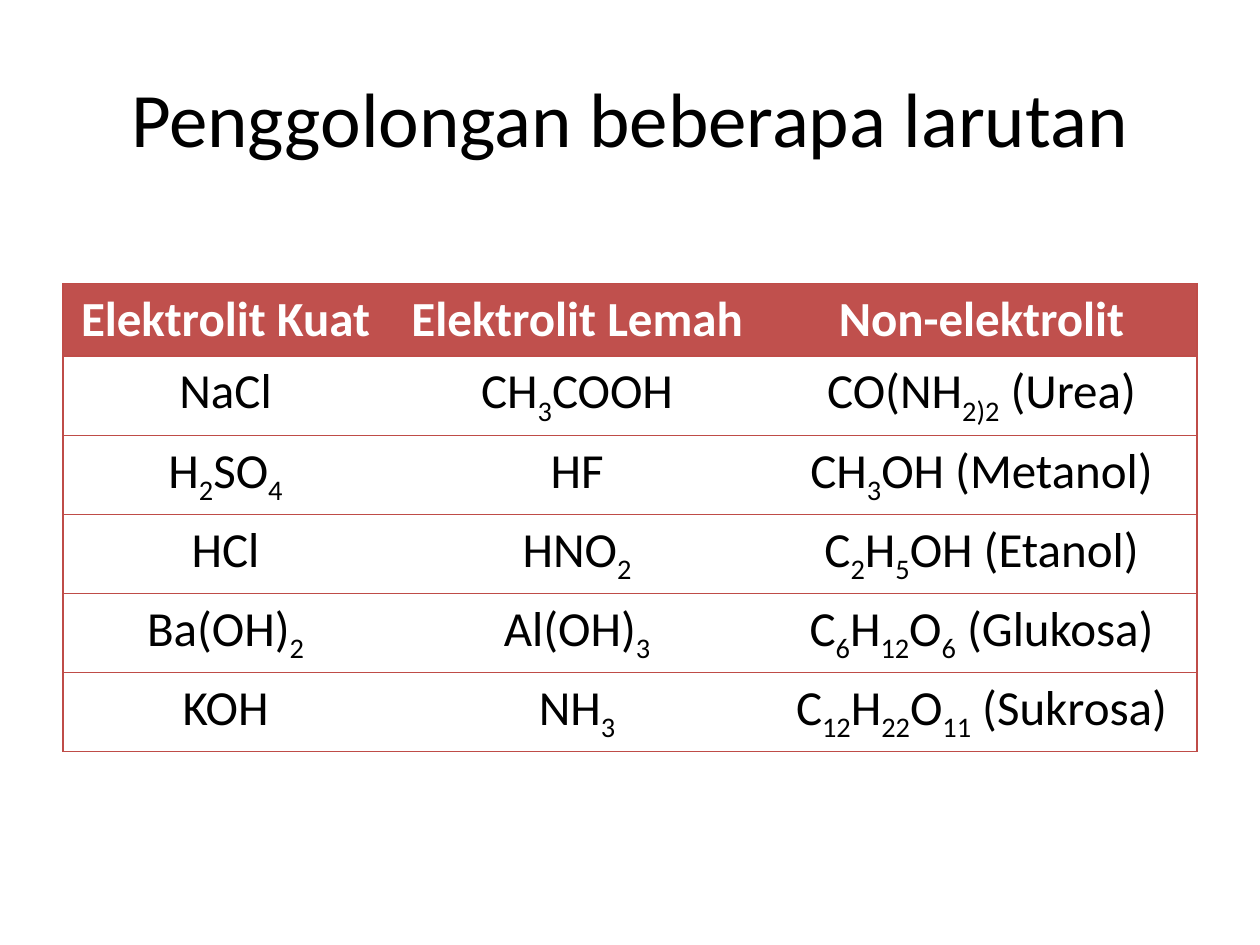
from dataclasses import dataclass

from lxml.etree import SubElement
from pptx import Presentation
from pptx.dml.color import RGBColor
from pptx.enum.text import MSO_ANCHOR, PP_ALIGN
from pptx.oxml.ns import qn
from pptx.util import Inches, Pt


@dataclass(frozen=True)
class Theme:
    font: str = "Calibri"
    ink: str = "000000"
    head: str = "C0504D"
    line: str = "BF4C48"
    white: str = "FFFFFF"
    title: int = 44
    body: int = 28
    rule: float = 0.75


THEME = Theme()
WIDTHS = (2.58, 3, 3.42)

# Text between underscores is set as a subscript
ROWS = (
    ("Elektrolit Kuat", "Elektrolit Lemah", "Non-elektrolit"),
    ("NaCl", "CH_3_COOH", "CO(NH_2)2_ (Urea)"),
    ("H_2_SO_4", "HF", "CH_3_OH (Metanol)"),
    ("HCl", "HNO_2", "C_2_H_5_OH (Etanol)"),
    ("Ba(OH)_2", "Al(OH)_3", "C_6_H_12_O_6_ (Glukosa)"),
    ("KOH", "NH_3", "C_12_H_22_O_11_ (Sukrosa)"),
)


def style(run, size, color, bold=False):
    font = run.font
    font.name = THEME.font
    font.size = Pt(size)
    font.bold = bold
    font.color.rgb = RGBColor.from_string(color)


def add_title(slide, text):
    title = slide.shapes.title
    title.left, title.top = Inches(0.5), Inches(0.3)
    title.width, title.height = Inches(9), Inches(1.25)
    frame = title.text_frame
    frame.text = text
    frame.vertical_anchor = MSO_ANCHOR.MIDDLE
    para = frame.paragraphs[0]
    para.alignment = PP_ALIGN.CENTER
    style(para.runs[0], THEME.title, THEME.ink)


def set_edge(cell, side, shown):
    edge = SubElement(cell._tc.get_or_add_tcPr(), qn(f"a:ln{side}"))
    edge.set("w", str(Pt(THEME.rule)))
    if shown:
        fill = SubElement(edge, qn("a:solidFill"))
        SubElement(fill, qn("a:srgbClr")).set("val", THEME.line)
    else:
        SubElement(edge, qn("a:noFill"))


def write(cell, text, color, bold):
    para = cell.text_frame.paragraphs[0]
    para.alignment = PP_ALIGN.CENTER
    for index, part in enumerate(text.split("_")):
        if not part:
            continue
        run = para.add_run()
        run.text = part
        style(run, THEME.body, color, bold)
        if index % 2:
            run.font._element.set("baseline", "-25000")


def add_grid(slide):
    frame = slide.shapes.add_table(
        len(ROWS), len(WIDTHS), Inches(0.5), Inches(2.25), Inches(9), Inches(3.4))
    table = frame.table
    table.horz_banding = False
    for column, width in zip(table.columns, WIDTHS):
        column.width = Inches(width)

    for r, row in enumerate(ROWS):
        head = r == 0
        for c, text in enumerate(row):
            cell = table.cell(r, c)
            write(cell, text, THEME.white if head else THEME.ink, head)
            # Outer frame and row rules only
            set_edge(cell, "L", c == 0)
            set_edge(cell, "R", c == len(WIDTHS) - 1)
            set_edge(cell, "T", True)
            set_edge(cell, "B", True)
            if head:
                cell.fill.solid()
                cell.fill.fore_color.rgb = RGBColor.from_string(THEME.head)
            else:
                cell.fill.background()


def main():
    deck = Presentation()
    deck.slide_width, deck.slide_height = Inches(10), Inches(7.5)
    slide = deck.slides.add_slide(deck.slide_layouts[5])
    add_title(slide, "Penggolongan beberapa larutan")
    add_grid(slide)
    deck.save("out.pptx")


if __name__ == "__main__":
    main()
